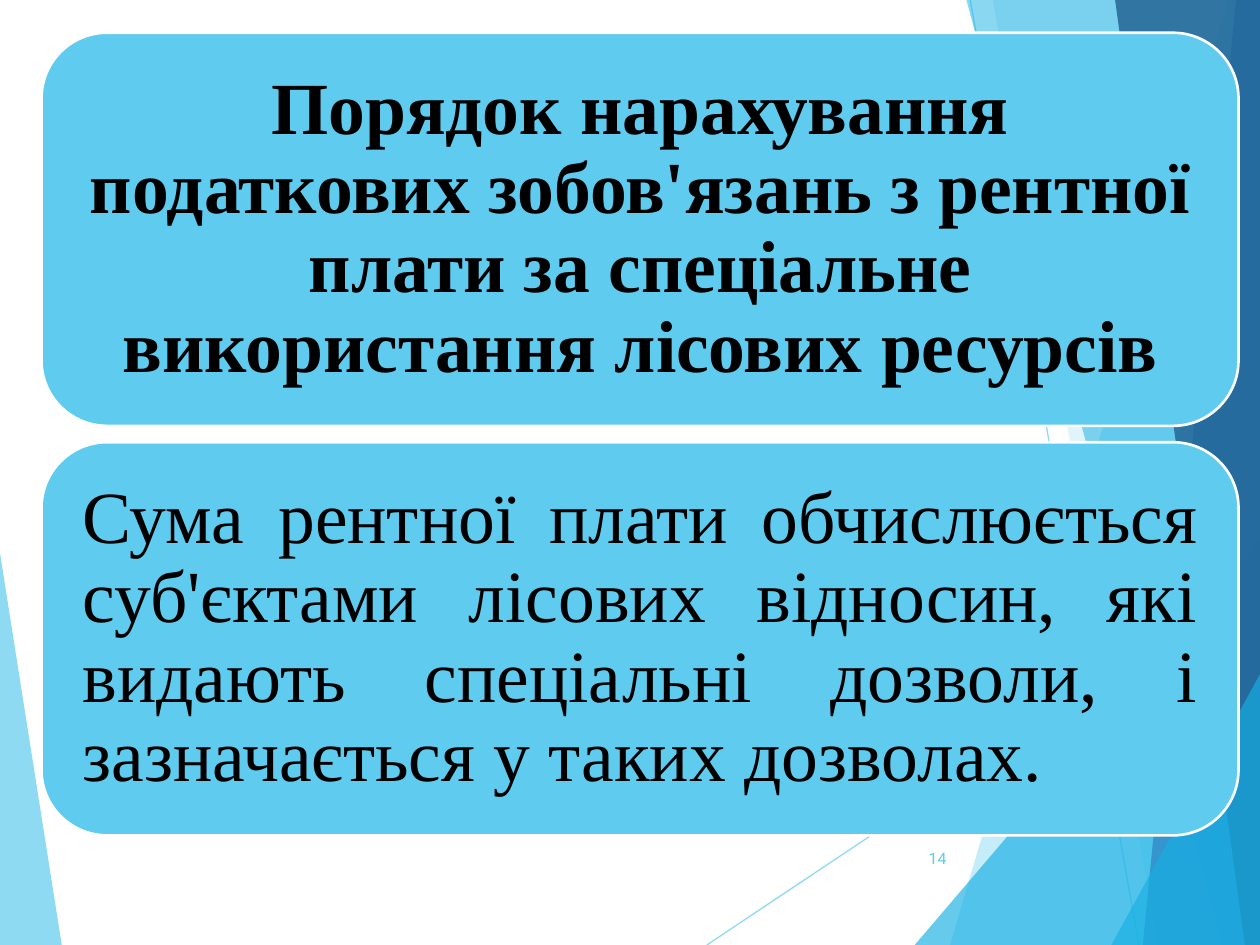
from lxml.etree import SubElement
from pptx import Presentation
from pptx.dml.color import RGBColor
from pptx.enum.shapes import MSO_CONNECTOR, MSO_SHAPE
from pptx.enum.text import MSO_ANCHOR, MSO_AUTO_SIZE, PP_ALIGN
from pptx.oxml.ns import qn
from pptx.util import Inches, Pt

SKY = RGBColor(0x5F, 0xCB, 0xEF)
CYAN = RGBColor(0x17, 0xB0, 0xE4)
BLUE = RGBColor(0x2E, 0x83, 0xC3)
NAVY = RGBColor(0x22, 0x62, 0x92)
WHITE = RGBColor(0xFF, 0xFF, 0xFF)
BLACK = RGBColor(0, 0, 0)

WIDTH, HEIGHT = 10, 7.5
PANEL_LEFT, PANEL_TOP, PANEL_WIDTH, PANEL_HEIGHT = 0.33, 0.26, 9.5, 3.12
PANEL_STEP = 3.25
TEXT_INSET = 0.155

TITLE = ("Порядок нарахування податкових зобов'язань з рентної плати "
         "за спеціальне використання лісових ресурсів")
BODY = ("Сума рентної плати обчислюється суб'єктами лісових відносин, "
        "які видають спеціальні дозволи, і зазначається у таких дозволах.")

LEFT_FACET = ([(0, 4.39), (0.49, HEIGHT), (0, HEIGHT)], SKY, 70)
RAYS = [((5.61, HEIGHT), (WIDTH, 4.57)), ((7.7, 0), (9.04, HEIGHT))]


def right_facet(top_x, bottom_x, top=0):
    """Return the corners of a facet that fills out to the right edge."""
    return [(top_x, top), (bottom_x, HEIGHT), (WIDTH, HEIGHT), (WIDTH, top)]


RIGHT_FACETS = [
    (right_facet(9.75, 7.54), SKY, 36),
    (right_facet(7.88, 9.19), SKY, 20),
    (right_facet(WIDTH, 7.26, 4.29), CYAN, 66),
    (right_facet(7.67, 9.7), CYAN, 50),
    (right_facet(9.81, 9.07), BLUE, 70),
    (right_facet(8.85, 9.88), NAVY, 82),
    (right_facet(WIDTH, 8.82, 5.35), CYAN, 66),
]


def set_opacity(shape, percent):
    """Make every solid colour of a shape partly transparent."""
    for color in shape.element.spPr.iter(qn("a:srgbClr")):
        SubElement(color, qn("a:alpha"), val=str(percent * 1000))


def add_facet(slide, points, color, opacity):
    """Draw one translucent polygon of the backdrop."""
    start, *others = [(x * 100, y * 100) for x, y in points]
    builder = slide.shapes.build_freeform(*start, scale=Inches(0.01))
    builder.add_line_segments(others, close=True)
    facet = builder.convert_to_shape()
    facet.shadow.inherit = False
    facet.fill.solid()
    facet.fill.fore_color.rgb = color
    facet.line.fill.background()
    set_opacity(facet, opacity)


def add_ray(slide, start, end):
    """Draw one thin translucent line of the backdrop."""
    ray = slide.shapes.add_connector(
        MSO_CONNECTOR.STRAIGHT, *[Inches(value) for value in start + end])
    ray.line.color.rgb = SKY
    ray.line.width = Pt(0.75)
    set_opacity(ray, 70)
    SubElement(ray.element.spPr, qn("a:effectLst"))


def add_panel(slide, row):
    """Draw the rounded panel of a row."""
    panel = slide.shapes.add_shape(
        MSO_SHAPE.ROUNDED_RECTANGLE, Inches(PANEL_LEFT),
        Inches(PANEL_TOP + row * PANEL_STEP),
        Inches(PANEL_WIDTH), Inches(PANEL_HEIGHT))
    panel.shadow.inherit = False
    panel.fill.solid()
    panel.fill.fore_color.rgb = SKY
    panel.line.color.rgb = WHITE
    panel.line.width = Pt(1.5)


def fill_placeholder(slide, placeholder, row, text, alignment, bold):
    """Put a placeholder with its text on top of the panel of a row."""
    slide.shapes.element.append(placeholder.element)
    placeholder.left = Inches(PANEL_LEFT + TEXT_INSET)
    placeholder.top = Inches(PANEL_TOP + row * PANEL_STEP + TEXT_INSET)
    placeholder.width = Inches(PANEL_WIDTH - 2 * TEXT_INSET)
    placeholder.height = Inches(PANEL_HEIGHT - 2 * TEXT_INSET)
    frame = placeholder.text_frame
    frame.text = text
    frame.word_wrap = True
    frame.auto_size = MSO_AUTO_SIZE.NONE
    frame.vertical_anchor = MSO_ANCHOR.MIDDLE
    frame.margin_left = frame.margin_right = Inches(0.17)
    frame.margin_top = frame.margin_bottom = Inches(0.17)
    paragraph = frame.paragraphs[0]
    properties = paragraph._p.get_or_add_pPr()
    properties.set("marL", "0")
    properties.set("indent", "0")
    SubElement(properties, qn("a:buNone"))
    paragraph.alignment = alignment
    paragraph.line_spacing = 0.9
    paragraph.space_before = Pt(0)
    paragraph.font.name = "Times New Roman"
    paragraph.font.size = Pt(42)
    paragraph.font.bold = bold
    paragraph.font.color.rgb = BLACK


def add_slide_number(slide, number):
    """Write the slide number below the panels."""
    box = slide.shapes.add_textbox(
        Inches(7.05), Inches(6.61), Inches(0.56), Inches(0.4))
    frame = box.text_frame
    frame.word_wrap = True
    frame.vertical_anchor = MSO_ANCHOR.MIDDLE
    frame.text = number
    paragraph = frame.paragraphs[0]
    paragraph.alignment = PP_ALIGN.RIGHT
    paragraph.font.name = "Roboto"
    paragraph.font.size = Pt(9)
    paragraph.font.color.rgb = SKY


def main():
    """Build the slide and save it."""
    presentation = Presentation()
    presentation.slide_width = Inches(WIDTH)
    presentation.slide_height = Inches(HEIGHT)
    slide = presentation.slides.add_slide(presentation.slide_layouts[1])
    title, body = slide.placeholders

    add_facet(slide, *LEFT_FACET)
    for start, end in RAYS:
        add_ray(slide, start, end)
    for facet in RIGHT_FACETS:
        add_facet(slide, *facet)

    rows = [(title, TITLE, PP_ALIGN.CENTER, True),
            (body, BODY, PP_ALIGN.JUSTIFY, False)]
    for row, (placeholder, text, alignment, bold) in enumerate(rows):
        add_panel(slide, row)
        fill_placeholder(slide, placeholder, row, text, alignment, bold)
    add_slide_number(slide, "14")
    presentation.save("out.pptx")


if __name__ == "__main__":
    main()
